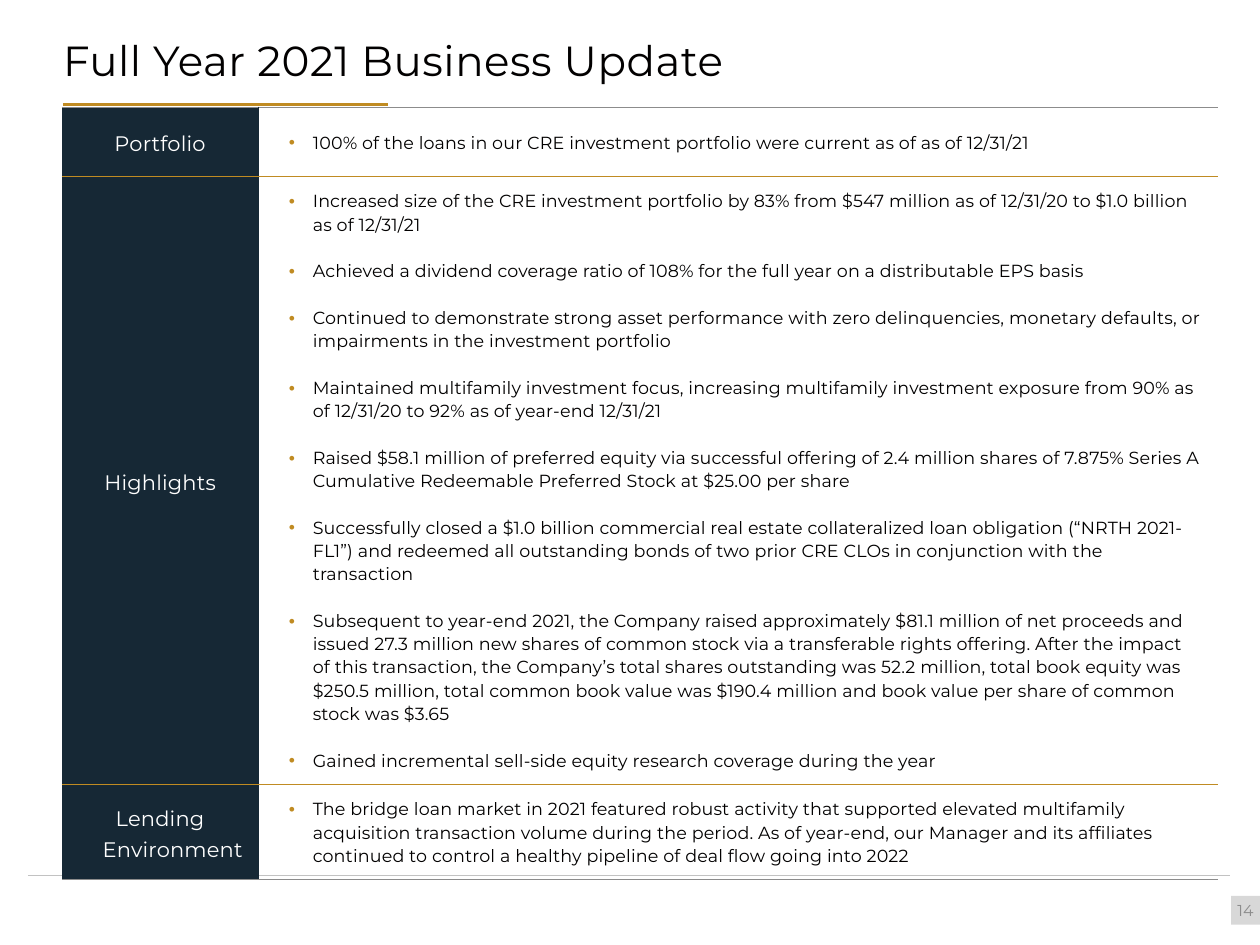
from lxml.etree import SubElement
from pptx import Presentation
from pptx.dml.color import RGBColor
from pptx.enum.shapes import MSO_CONNECTOR, MSO_SHAPE
from pptx.enum.text import MSO_ANCHOR, PP_ALIGN
from pptx.oxml.ns import qn
from pptx.util import Pt

COLORS = {
    "ink": "020000", "navy": "162835", "gold": "C08B22", "white": "FFFFFF",
    "rule": "C2C2C2", "edge": "8C8C8C", "badge": "D8D8D8",
}

ROWS = [
    ("Portfolio", 39.6, [
        "100% of the loans in our CRE investment portfolio were current as of as of 12/31/21",
    ]),
    ("Highlights", 347.3, [
        "Increased size of the CRE investment portfolio by 83% from $547 million as of 12/31/20 "
        "to $1.0 billion as of 12/31/21",
        "Achieved a dividend coverage ratio of 108% for the full year on a distributable EPS basis",
        "Continued to demonstrate strong asset performance with zero delinquencies, monetary "
        "defaults, or impairments in the investment portfolio",
        "Maintained multifamily investment focus, increasing multifamily investment exposure "
        "from 90% as of 12/31/20 to 92% as of year-end 12/31/21",
        "Raised $58.1 million of preferred equity via successful offering of 2.4 million shares "
        "of 7.875% Series A Cumulative Redeemable Preferred Stock at $25.00 per share",
        "Successfully closed a $1.0 billion commercial real estate collateralized loan "
        "obligation (“NRTH 2021-FL1”) and redeemed all outstanding bonds of two prior CRE CLOs "
        "in conjunction with the transaction",
        "Subsequent to year-end 2021, the Company raised approximately $81.1 million of net "
        "proceeds and issued 27.3 million new shares of common stock via a transferable rights "
        "offering. After the impact of this transaction, the Company’s total shares outstanding "
        "was 52.2 million, total book equity was $250.5 million, total common book value was "
        "$190.4 million and book value per share of common stock was $3.65",
        "Gained incremental sell-side equity research coverage during the year",
    ]),
    ("Lending Environment", 54.4, [
        "The bridge loan market in 2021 featured robust activity that supported elevated "
        "multifamily acquisition transaction volume during the period. As of year-end, our "
        "Manager and its affiliates continued to control a healthy pipeline of deal flow going "
        "into 2022",
    ]),
]


def rgb(name):
    return RGBColor.from_string(COLORS[name])


def assign(item, values):
    for key, value in values.items():
        setattr(item, key, value)


class Deck:
    font = "Montserrat"
    label = {"alignment": PP_ALIGN.CENTER, "line_spacing": 1.2}
    point = {"alignment": PP_ALIGN.LEFT, "line_spacing": 1.1}

    def __init__(self, wide, high):
        self.file = Presentation()
        assign(self.file, {"slide_width": Pt(wide), "slide_height": Pt(high)})
        self.slide = self.file.slides.add_slide(self.file.slide_layouts[5])

    def text(self, par, words, size, color, track=0):
        """Add a run; track is letter spacing in hundredths of a point."""
        run = par.add_run()
        run.text = words
        assign(run.font, {"name": self.font, "size": Pt(size)})
        run.font.color.rgb = rgb(color)
        if track:
            run.font._element.set("spc", str(track))

    def inset(self, item, left, top, right, low):
        sides = zip(("left", "top", "right", "bottom"), (left, top, right, low))
        assign(item, {f"margin_{side}": Pt(gap) for side, gap in sides})

    def indent(self, par, left, hang):
        props = par._p.get_or_add_pPr()
        props.set("marL", str(Pt(left)))
        props.set("indent", str(Pt(-hang)))
        return props

    def title(self, words, *box):
        shape = self.slide.shapes.title
        names = ("left", "top", "width", "height")
        assign(shape, dict(zip(names, map(Pt, box))))
        frame = shape.text_frame
        assign(frame, {"word_wrap": True, "vertical_anchor": MSO_ANCHOR.TOP})
        self.inset(frame, 0, 3.6, 7.2, 3.6)
        par = frame.paragraphs[0]
        assign(par, {"alignment": PP_ALIGN.LEFT, "line_spacing": Pt(30)})
        self.text(par, words, 24, "ink", 30)

    def line(self, left, right, y, color, width):
        line = self.slide.shapes.add_connector(
            MSO_CONNECTOR.STRAIGHT, Pt(left), Pt(y), Pt(right), Pt(y))
        line.line.color.rgb = rgb(color)
        line.line.width = Pt(width)
        SubElement(line._element.spPr, qn("a:effectLst"))

    def badge(self, words, *box):
        shape = self.slide.shapes.add_shape(MSO_SHAPE.RECTANGLE, *map(Pt, box))
        shape.shadow.inherit = False
        shape.fill.solid()
        shape.fill.fore_color.rgb = rgb("badge")
        shape.line.fill.background()
        frame = shape.text_frame
        frame.vertical_anchor = MSO_ANCHOR.MIDDLE
        self.inset(frame, 0, 0, 0, 0)
        par = frame.paragraphs[0]
        par.alignment = PP_ALIGN.CENTER
        self.text(par, words, 9, "edge")

    def border(self, cell, sides):
        """Draw the sides given as {tag letter: color}; hide the others."""
        props = cell._tc.get_or_add_tcPr()
        for side in "LRTB":
            edge = SubElement(props, qn(f"a:ln{side}"), w=str(Pt(0.5)))
            if side in sides:
                fill = SubElement(edge, qn("a:solidFill"))
                SubElement(fill, qn("a:srgbClr"), val=COLORS[sides[side]])
            else:
                SubElement(edge, qn("a:noFill"))

    def head(self, cell, words):
        cell.fill.solid()
        cell.fill.fore_color.rgb = rgb("navy")
        self.inset(cell, 0, 0, 0, 0)
        par = cell.text_frame.paragraphs[0]
        assign(par, self.label)
        self.indent(par, 14.4, 14.4)
        self.text(par, words, 12, "white", 10)

    def points(self, cell, items):
        cell.fill.background()
        self.inset(cell, 2.9, 7.2, 8.6, 7.2)
        frame = cell.text_frame
        for i, words in enumerate(items):
            par = frame.add_paragraph() if i else frame.paragraphs[0]
            assign(par, self.point)
            if i:
                par.space_before = Pt(13.3)
            props = self.indent(par, 28.1, 13.7)
            tint = SubElement(props, qn("a:buClr"))
            SubElement(tint, qn("a:srgbClr"), val=COLORS["gold"])
            SubElement(props, qn("a:buFont"), typeface="Arial")
            SubElement(props, qn("a:buChar"), char="•")
            self.text(par, words, 10, "ink", 10)

    def table(self, rows, left, top, widths):
        high = sum(row[1] for row in rows)
        grid = self.slide.shapes.add_table(
            len(rows), len(widths), Pt(left), Pt(top), Pt(sum(widths)), Pt(high)).table
        assign(grid, {"first_row": False, "horz_banding": False})
        for col, width in zip(grid.columns, widths):
            col.width = Pt(width)
        last = len(rows) - 1
        for i, (name, tall, items) in enumerate(rows):
            grid.rows[i].height = Pt(tall)
            head, body = grid.cell(i, 0), grid.cell(i, 1)
            ends = {"T": "gold" if i else "edge", "B": "gold" if i < last else "edge"}
            for cell, side in ((head, "R"), (body, "L")):
                self.border(cell, {side: "navy", **ends})
                cell.vertical_anchor = MSO_ANCHOR.MIDDLE
            self.head(head, name)
            self.points(body, items)


def main():
    deck = Deck(720, 540)
    deck.line(16, 702.7, 500.4, "rule", 0.5)
    deck.line(36, 221.8, 59.6, "gold", 1.5)
    deck.title("Full Year 2021 Business Update", 36, 15.1, 594, 61.2)
    deck.badge("14", 703.5, 511.9, 16.5, 16.5)
    deck.table(ROWS, 35.3, 61.2, (112.5, 548.5))
    deck.file.save("out.pptx")


if __name__ == "__main__":
    main()
